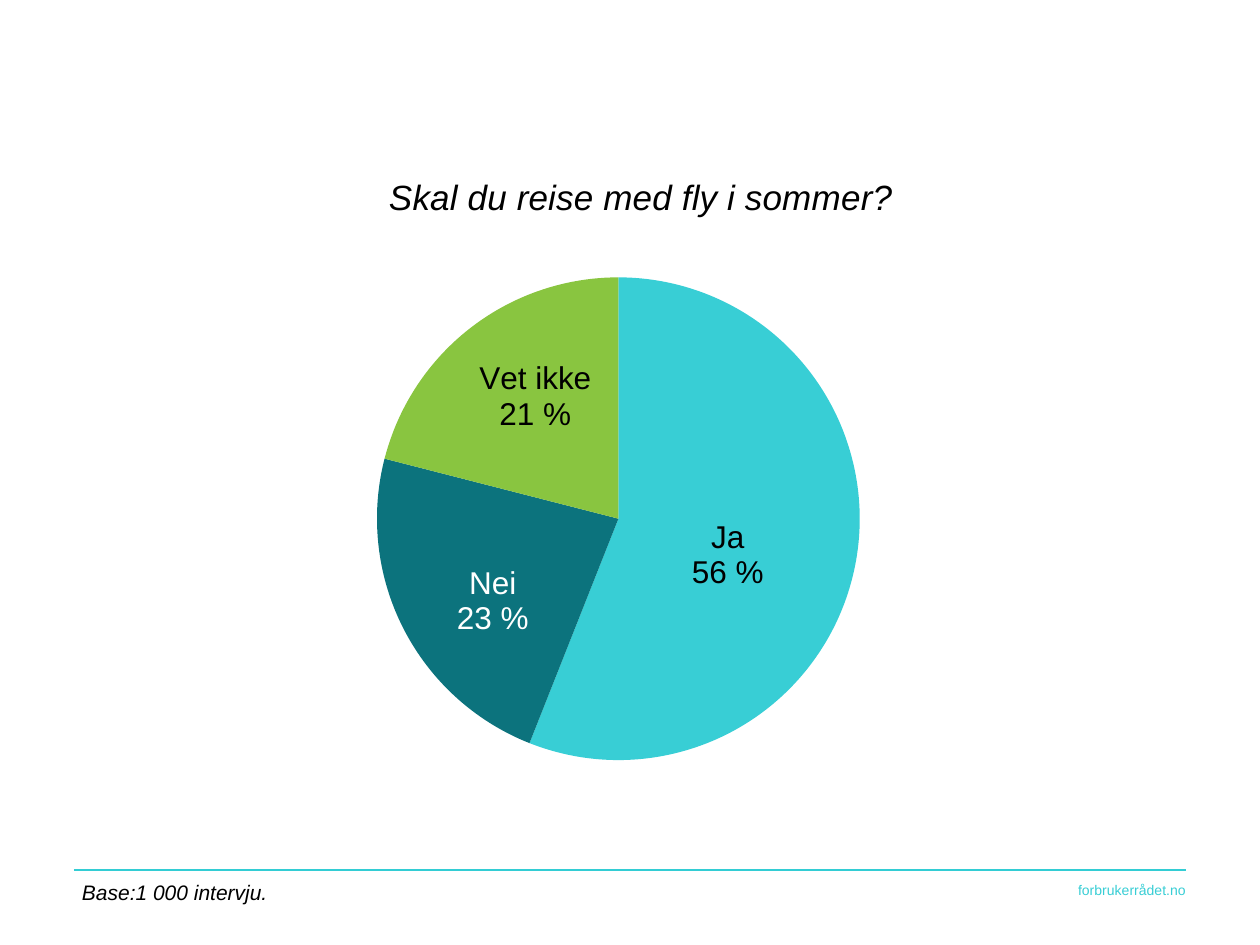
from lxml import etree
from pptx import Presentation
from pptx.chart.data import CategoryChartData
from pptx.dml.color import RGBColor as RGB
from pptx.enum.chart import XL_CHART_TYPE as Kind, XL_LABEL_POSITION as Spot
from pptx.enum.shapes import MSO_CONNECTOR as Wire
from pptx.enum.text import MSO_ANCHOR as Anchor, PP_ALIGN as Align
from pptx.oxml import parse_xml
from pptx.oxml.ns import nsdecls, qn
from pptx.util import Pt

PX = 914400 / 126
COLORS = {"cyan": "38CED5", "rule": "33CDD4", "teal": "0C737D",
          "green": "89C540", "black": "000000", "white": "FFFFFF"}


def px(n):
    return round(n * PX)


def place(parent, index, **parts):
    """Give a chart part a manual layout, in fractions of the chart."""
    for old in parent.findall(qn("c:layout")):
        parent.remove(old)
    body = "".join(f'<c:{tag} val="{val}"/>' for tag, val in parts.items())
    parent.insert(index, parse_xml(
        f'<c:layout {nsdecls("c")}><c:manualLayout>{body}'
        "</c:manualLayout></c:layout>"))


class Page:
    def __init__(self, deck, face="Arial"):
        self.slide = deck.slides.add_slide(deck.slide_layouts[6])
        self.shapes = self.slide.shapes
        self.face = face

    def style(self, font, size, color, italic=False):
        font.name, font.size, font.italic = self.face, Pt(size), italic
        font.bold = False
        font.color.rgb = RGB.from_string(COLORS[color])

    def rule(self, x1, x2, y, color, width):
        line = self.shapes.add_connector(
            Wire.STRAIGHT, px(x1), px(y), px(x2), px(y))
        line.line.color.rgb = RGB.from_string(COLORS[color])
        line.line.width = Pt(width)
        etree.SubElement(line._element.spPr, qn("a:effectLst"))

    def text(self, words, box, size, color, align=Align.LEFT,
             anchor=Anchor.TOP, pad=(0, 0, 0, 0), italic=False):
        frame = self.shapes.add_textbox(*map(px, box)).text_frame
        frame.word_wrap, frame.vertical_anchor = True, anchor
        (frame.margin_left, frame.margin_top,
         frame.margin_right, frame.margin_bottom) = map(px, pad)
        para = frame.paragraphs[0]
        para.text, para.alignment = words, align
        self.style(para.font, size, color, italic)

    def pie(self, title, slices, box):
        data = CategoryChartData(number_format="0 %")
        data.categories = [cut[0] for cut in slices]
        data.add_series("Series 1", [cut[1] for cut in slices])
        chart = self.shapes.add_chart(Kind.PIE, *map(px, box), data).chart
        chart.has_legend = False
        self.style(chart.font, 18, "black")

        # Title and plot area
        chart.has_title = True
        head = chart.chart_title.text_frame.paragraphs[0]
        head.text = title
        self.style(head.font, 20, "black", italic=True)
        place(chart.chart_title._element, 1,
              xMode="edge", yMode="edge", x=0.23, y=0.02)
        place(chart._chartSpace.chart.plotArea, 0, layoutTarget="inner",
              xMode="edge", yMode="edge", x=0.22, y=0.18, w=0.54, h=0.71)

        # Slices and their labels
        plot = chart.plots[0]
        plot.vary_by_categories = True
        series = plot.series[0]
        for i, (_, _, fill, ink, dx, dy) in enumerate(slices):
            point = series.points[i]
            point.format.fill.solid()
            point.format.fill.fore_color.rgb = RGB.from_string(COLORS[fill])
            point.format.line.fill.background()
            self.style(point.data_label.font, 18, ink)
            point.data_label.position = Spot.CENTER
            label = series._element.xpath(".//c:dLbl")[i]
            place(label, 1, x=dx, y=dy)
            label.insert(2, parse_xml(
                f'<c:numFmt {nsdecls("c")} formatCode="0 %" '
                'sourceLinked="0"/>'))
            label.find(qn("c:showCatName")).set("val", "1")
            etree.SubElement(label, qn("c:separator")).text = "\n"


def main():
    deck = Presentation()
    deck.slide_width, deck.slide_height = px(1260), px(945)
    page = Page(deck)

    # Footer band
    page.rule(74, 1186, 870, "rule", 0.92)
    page.text("forbrukerrådet.no", (819, 876, 367, 30), 8, "cyan",
              align=Align.RIGHT, pad=(13, 6, 0, 6))

    # Survey answers: name, share, fill, label colour, label shift
    page.pie("Skal du reise med fly i sommer?", [
        ("Ja", 0.56, "cyan", "black", -0.01, 0.02),
        ("Nei", 0.23, "teal", "white", -0.02, 0.04),
        ("Vet ikke", 0.21, "green", "black", -0.01, -0.04),
    ], (174, 155, 907, 680))

    # Sample size
    page.text("Base:1 000 intervju.", (82, 880, 548, 25), 12, "black",
              anchor=Anchor.BOTTOM, italic=True)

    deck.save("out.pptx")


if __name__ == "__main__":
    main()
